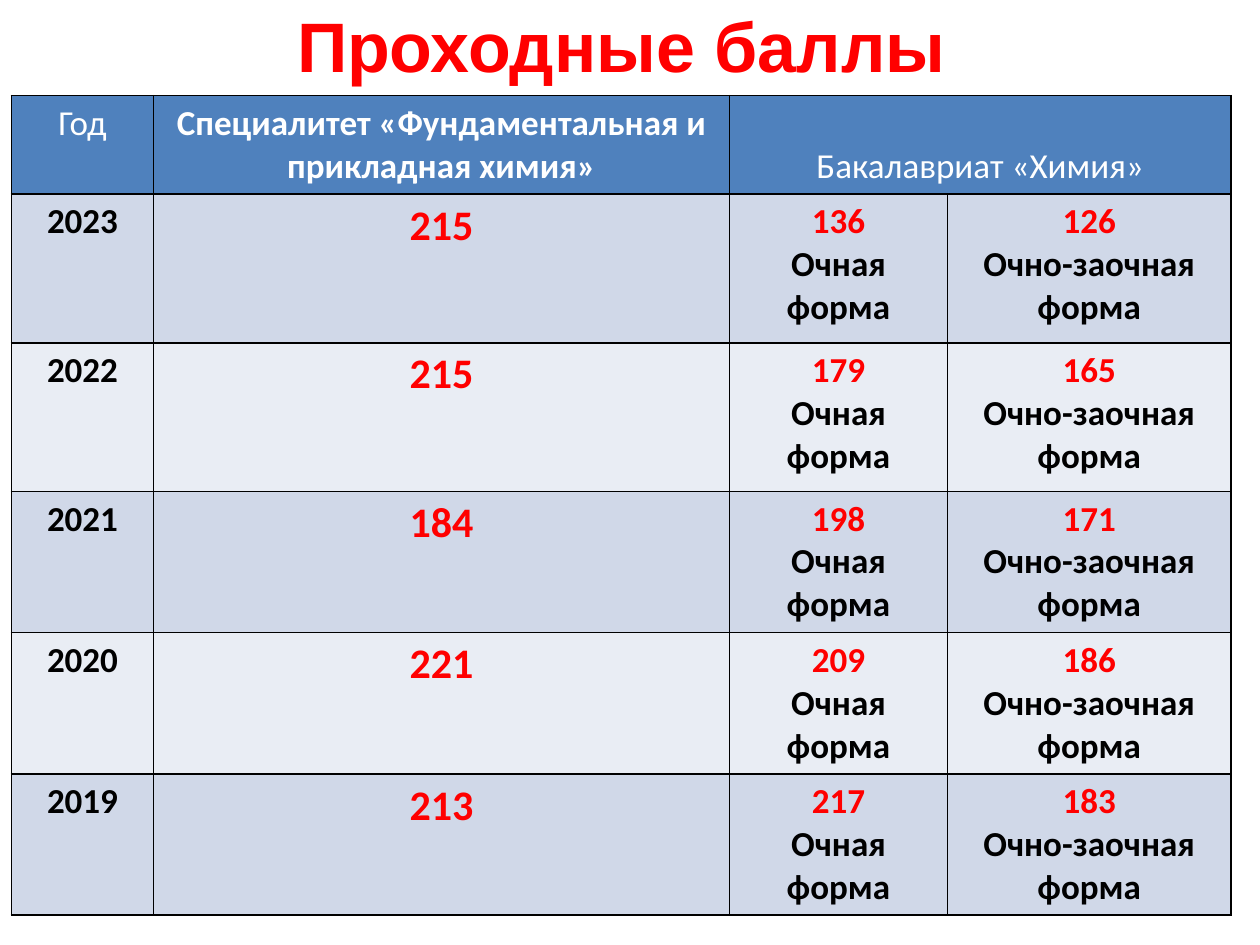
from lxml.etree import SubElement
from pptx import Presentation
from pptx.dml.color import RGBColor
from pptx.enum.text import MSO_ANCHOR, PP_ALIGN
from pptx.oxml.ns import qn
from pptx.util import Inches, Pt

COLORS = {
    "header": "4F81BD", "odd": "D0D8E8", "even": "E9EDF4",
    "white": "FFFFFF", "black": "000000", "red": "FF0000",
}
COLUMNS = [1.13, 4.57, 1.73, 2.25]
ROWS = [0.76, 1.18, 1.18, 1.1, 1.1, 1.1]
FORMATS = {
    "title": {"name": "Arial", "size": Pt(40), "bold": True, "color": "red"},
    "heading": {"name": "Calibri", "size": Pt(20), "bold": False, "color": "white"},
    "strong": {"name": "Calibri", "size": Pt(20), "bold": True, "color": "white"},
    "label": {"name": "Calibri", "size": Pt(20), "bold": True, "color": "black"},
    "score": {"name": "Calibri", "size": Pt(20), "bold": True, "color": "red"},
    "main score": {"name": "Calibri", "size": Pt(24), "bold": True, "color": "red"},
}
HEADINGS = [
    ("Год", "heading"),
    ("Специалитет «Фундаментальная и прикладная химия»", "strong"),
    ("Бакалавриат «Химия»", "heading"),
]
SCORES = [
    ("2023", "215", "136", "126"),
    ("2022", "215", "179", "165"),
    ("2021", "184", "198", "171"),
    ("2020", "221", "209", "186"),
    ("2019", "213", "217", "183"),
]


def rgb(name):
    return RGBColor.from_string(COLORS[name])


def write(frame, lines):
    for index, (text, style) in enumerate(lines):
        para = frame.add_paragraph() if index else frame.paragraphs[0]
        para.alignment = PP_ALIGN.CENTER
        span = para.add_run()
        span.text = text
        for key, value in FORMATS[style].items():
            if key == "color":
                span.font.color.rgb = rgb(value)
            else:
                setattr(span.font, key, value)


def paint_cell(cell, fill):
    properties = cell._tc.get_or_add_tcPr()
    for side in ("lnL", "lnR", "lnT", "lnB"):
        line = SubElement(properties, qn(f"a:{side}"), w=str(Pt(1)))
        solid = SubElement(line, qn("a:solidFill"))
        SubElement(solid, qn("a:srgbClr"), val=COLORS["black"])
    cell.fill.solid()
    cell.fill.fore_color.rgb = rgb(fill)


def add_title(page, box):
    frame = page.shapes.add_textbox(*map(Inches, box)).text_frame
    frame.word_wrap = False
    write(frame, [("Проходные баллы", "title")])


def add_scores(page, left, top):
    table = page.shapes.add_table(
        len(ROWS), len(COLUMNS), Inches(left), Inches(top),
        Inches(sum(COLUMNS)), Inches(sum(ROWS)),
    ).table
    table.horz_banding = False
    for column, width in zip(table.columns, COLUMNS):
        column.width = Inches(width)
    for index, (row, height) in enumerate(zip(table.rows, ROWS)):
        row.height = Inches(height)
        fill = "header" if index == 0 else "odd" if index % 2 else "even"
        for cell in row.cells:
            paint_cell(cell, fill)

    table.cell(0, 2).merge(table.cell(0, 3))
    table.cell(0, 2).vertical_anchor = MSO_ANCHOR.BOTTOM
    for index, heading in enumerate(HEADINGS):
        write(table.cell(0, index).text_frame, [heading])

    for index, (year, specialist, daytime, mixed) in enumerate(SCORES, start=1):
        contents = [
            [(year, "label")],
            [(specialist, "main score")],
            [(daytime, "score"), ("Очная форма", "label")],
            [(mixed, "score"), ("Очно-заочная форма", "label")],
        ]
        for cell, lines in zip(table.rows[index].cells, contents):
            write(cell.text_frame, lines)


def main():
    deck = Presentation()
    deck.slide_width, deck.slide_height = Inches(10), Inches(7.5)
    page = deck.slides.add_slide(deck.slide_layouts[6])
    add_scores(page, 0.09, 0.76)
    add_title(page, (2.23, -0.03, 5.4, 0.77))
    deck.save("out.pptx")


if __name__ == "__main__":
    main()
